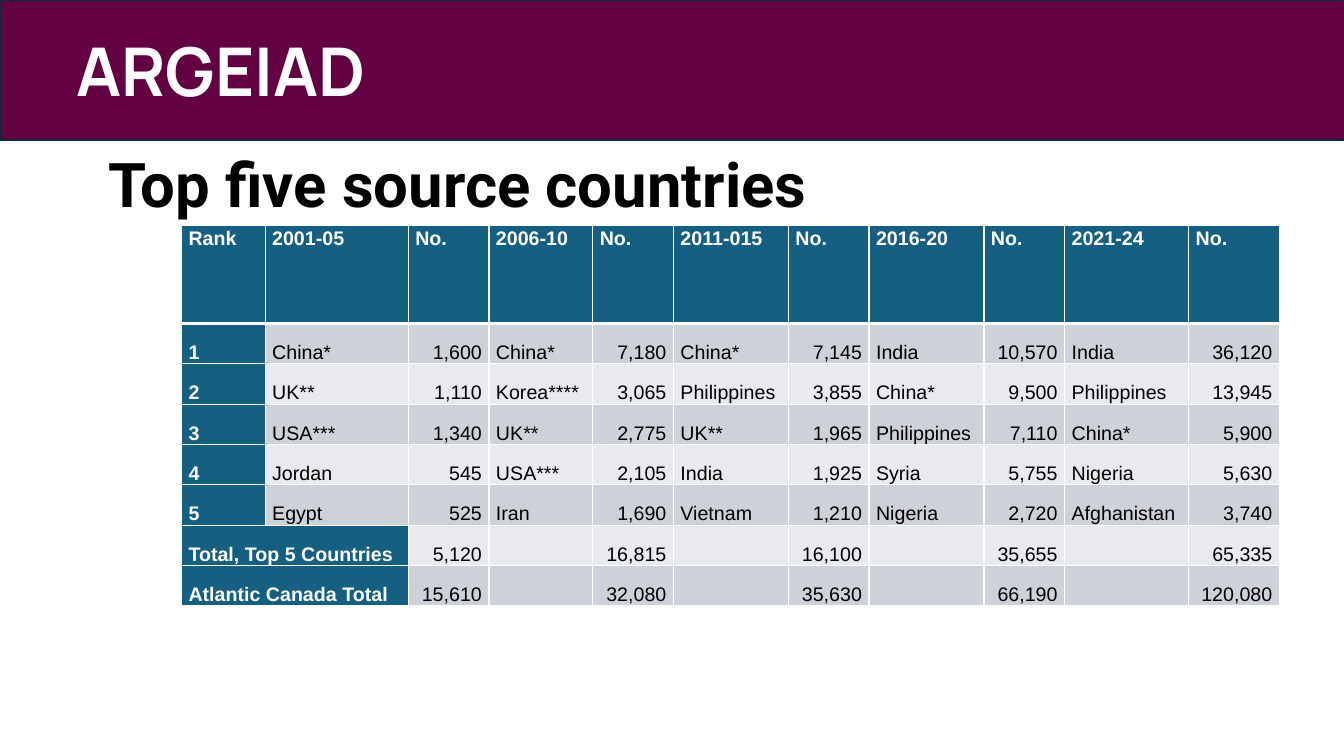
"""Build the slide on the top five source countries of immigrants."""
import pptx
import pptx.dml.color
import pptx.enum.shapes
import pptx.enum.text
import pptx.oxml
import pptx.oxml.ns
import pptx.util

Inches = pptx.util.Inches
Pt = pptx.util.Pt
ANCHOR = pptx.enum.text.MSO_ANCHOR
ALIGN = pptx.enum.text.PP_ALIGN

BANNER = "ARGEIAD"
TITLE = "Top five source countries"
ROWS = [
    ("Rank", "2001-05", "No.", "2006-10", "No.", "2011-015", "No.",
     "2016-20", "No.", "2021-24", "No."),
    ("1", "China*", "1,600", "China*", "7,180", "China*", "7,145",
     "India", "10,570", "India", "36,120"),
    ("2", "UK**", "1,110", "Korea****", "3,065", "Philippines", "3,855",
     "China*", "9,500", "Philippines", "13,945"),
    ("3", "USA***", "1,340", "UK**", "2,775", "UK**", "1,965",
     "Philippines", "7,110", "China*", "5,900"),
    ("4", "Jordan", "545", "USA***", "2,105", "India", "1,925",
     "Syria", "5,755", "Nigeria", "5,630"),
    ("5", "Egypt", "525", "Iran", "1,690", "Vietnam", "1,210",
     "Nigeria", "2,720", "Afghanistan", "3,740"),
    ("Total, Top 5 Countries", "", "5,120", "", "16,815", "", "16,100",
     "", "35,655", "", "65,335"),
    ("Atlantic Canada Total", "", "15,610", "", "32,080", "", "35,630",
     "", "66,190", "", "120,080"),
]
TOTAL_ROWS = (6, 7)
COL_WIDTHS = [0.83, 1.42, 0.8, 1.03, 0.8, 1.14, 0.8, 1.14, 0.8, 1.23, 0.9]
HEADER_HEIGHT, ROW_HEIGHT = 0.97, 0.4
WHITE, BLACK, PLUM, NAVY = "FFFFFF", "000000", "630041", "092A39"
TEAL, BANDS = "156082", ("E8EAED", "CCD2D8")


def rgb(value):
    return pptx.dml.color.RGBColor.from_string(value)


def write(tf, text, font="Arial", size=14, color=BLACK, bold=False,
          align=ALIGN.LEFT, spacing=None, after=None):
    p = tf.paragraphs[0]
    p.alignment = align
    if spacing:
        p.line_spacing = spacing
    if after:
        p.space_after = Pt(after)
    r = p.add_run()
    r.text = text
    r.font.name, r.font.size, r.font.bold = font, Pt(size), bold
    r.font.color.rgb = rgb(color)


def add_borders(cell, top, bottom):
    tcPr = cell._tc.get_or_add_tcPr()
    for side, width in (("L", 1), ("R", 1), ("T", top), ("B", bottom)):
        tcPr.append(pptx.oxml.parse_xml(
            f'<a:ln{side} {pptx.oxml.ns.nsdecls("a")} w="{Pt(width)}">'
            f'<a:solidFill><a:srgbClr val="{WHITE}"/></a:solidFill></a:ln{side}>'))


def add_banner(slide, width):
    sp = slide.shapes.add_shape(pptx.enum.shapes.MSO_SHAPE.RECTANGLE,
                                0, 0, width, Inches(1.39))
    sp.shadow.inherit = False
    sp.fill.solid()
    sp.fill.fore_color.rgb = rgb(PLUM)
    sp.line.color.rgb = rgb(NAVY)
    sp.line.width = Pt(1.5)
    tf = sp.text_frame
    tf.margin_left = Inches(0.76)
    tf.vertical_anchor = ANCHOR.MIDDLE
    write(tf, BANNER, font="Manrope", size=48, color=WHITE, bold=True)


def add_title(slide):
    sp = slide.shapes.add_textbox(Inches(0.98), Inches(1.4), Inches(8), Inches(0.84))
    sp.text_frame.word_wrap = True
    write(sp.text_frame, TITLE, font="Roboto", size=44, bold=True)


def add_country_table(slide):
    heights = [HEADER_HEIGHT] + [ROW_HEIGHT] * (len(ROWS) - 1)
    table = slide.shapes.add_table(
        len(ROWS), len(COL_WIDTHS), Inches(1.8), Inches(2.24),
        Inches(sum(COL_WIDTHS)), Inches(sum(heights))).table
    for col, width in zip(table.columns, COL_WIDTHS):
        col.width = Inches(width)
    for row, height in zip(table.rows, heights):
        row.height = Inches(height)
    for i in TOTAL_ROWS:
        table.cell(i, 0).merge(table.cell(i, 1))

    for i, row in enumerate(ROWS):
        for j, text in enumerate(row):
            cell = table.cell(i, j)
            header = i == 0
            label = header or j == 0 or cell.is_spanned
            number = not header and j > 0 and j % 2 == 0
            add_borders(cell, 3 if i == 1 else 1, 3 if header else 1)
            cell.fill.solid()
            cell.fill.fore_color.rgb = rgb(TEAL if label else BANDS[i % 2])
            cell.margin_left = cell.margin_right = Inches(0.07)
            cell.margin_top = cell.margin_bottom = 0
            cell.vertical_anchor = ANCHOR.TOP if header else ANCHOR.BOTTOM
            if text:
                write(cell.text_frame, text, color=WHITE if label else BLACK,
                      bold=label, align=ALIGN.RIGHT if number else ALIGN.LEFT,
                      spacing=1.07, after=8)


def main():
    prs = pptx.Presentation()
    prs.slide_width, prs.slide_height = Inches(13.33), Inches(7.5)
    slide = prs.slides.add_slide(prs.slide_layouts[6])
    add_banner(slide, prs.slide_width)
    add_title(slide)
    add_country_table(slide)
    prs.save("out.pptx")


if __name__ == "__main__":
    main()
